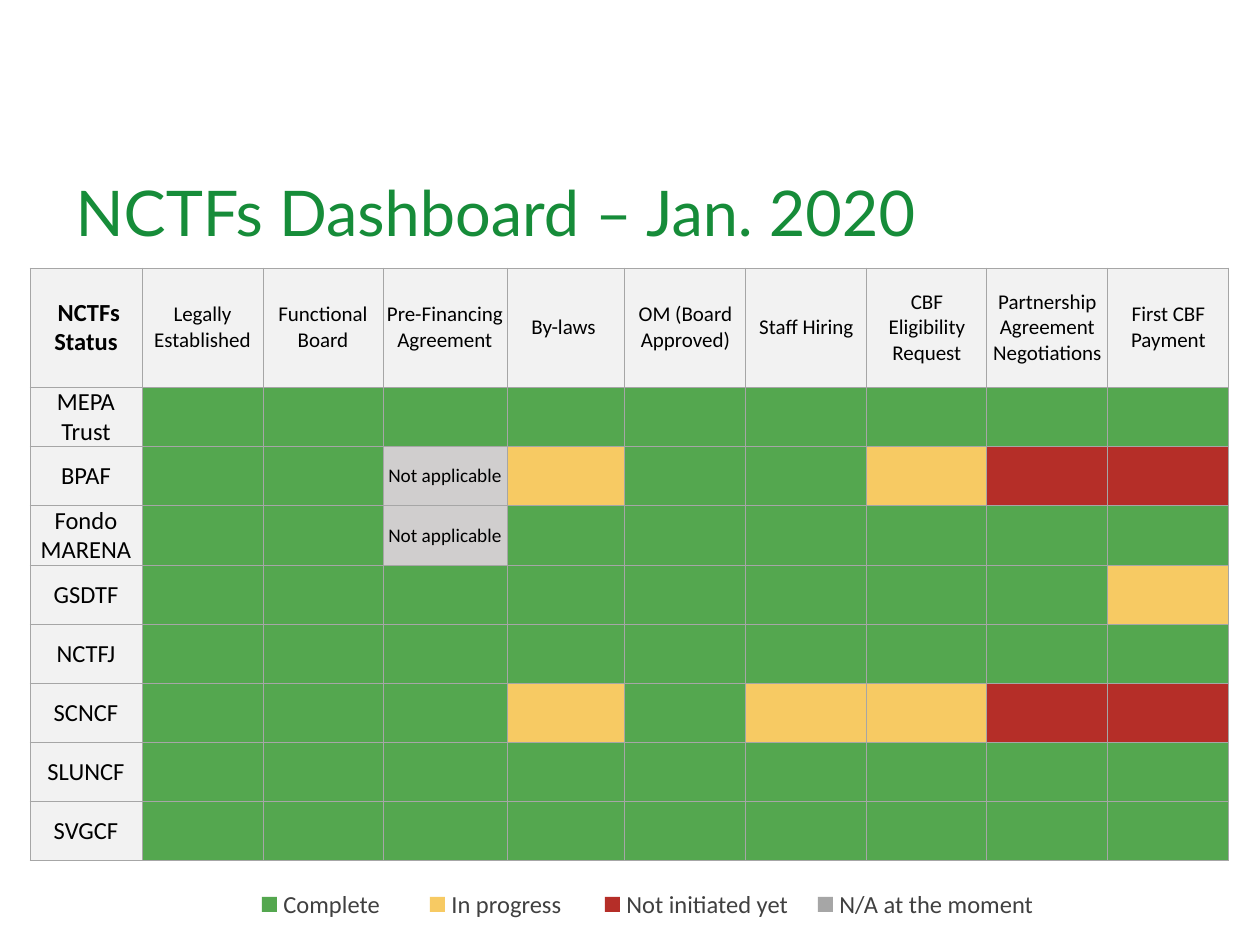
from lxml.etree import SubElement
from pptx import Presentation
from pptx.dml.color import RGBColor
from pptx.enum.shapes import MSO_SHAPE as Shape
from pptx.enum.text import MSO_ANCHOR as Anchor, MSO_AUTO_SIZE as AutoSize, PP_ALIGN as Align
from pptx.oxml.ns import qn
from pptx.util import Emu, Pt

EMU_PER_PX = 914400 / 126

COLORS = {
    "title": "168C39",
    "text": "000000",
    "legend": "404040",
    "header": "F2F2F2",
    "border": "A6A6A6",
    "complete": "54A74F",
    "progress": "F7CA63",
    "not_started": "B52E28",
    "not_applicable": "D0CECE",
    "on_hold": "A6A6A6",
}

HEADINGS = [
    "\u00a0NCTFs Status", "Legally Established", "Functional Board",
    "Pre-Financing Agreement", "By-laws ", "OM (Board Approved)", "Staff Hiring",
    "CBF Eligibility Request", "Partnership Agreement Negotiations ",
    "First CBF Payment",
]
# One letter per milestone: see STATUS
FUNDS = {
    "MEPA Trust": "CCCCCCCCC",
    "BPAF": "CCNPCCPXX",
    "Fondo MARENA": "CCNCCCCCC",
    "GSDTF": "CCCCCCCCP",
    "NCTFJ": "CCCCCCCCC",
    "SCNCF": "CCCPCPPXX",
    "SLUNCF": "CCCCCCCCC",
    "SVGCF": "CCCCCCCCC",
}
STATUS = {"C": "complete", "P": "progress", "X": "not_started", "N": "not_applicable"}
COLUMN_WIDTHS = [112, 121, 120, 124, 118, 121, 121, 120, 121, 121]
HEADER_HEIGHT, ROW_HEIGHT = 119, 59

# Marker left, label width, label, colour
LEGEND = [
    (262, 145, "Complete", "complete"),
    (430, 145, "In progress", "progress"),
    (605, 227, "Not initiated yet", "not_started"),
    (818, 432, "N/A at the moment", "on_hold"),
]


def px(value):
    return Emu(round(value * EMU_PER_PX))


def rgb(name):
    return RGBColor.from_string(COLORS[name])


def write(frame, text, size=14, font="Calibri", color="text", bold=False, align=Align.LEFT):
    paragraph = frame.paragraphs[0]
    paragraph.alignment = align
    run = paragraph.add_run()
    run.text = text
    run.font.size = Pt(size)
    run.font.name = font
    run.font.bold = bold
    run.font.color.rgb = rgb(color)


def format_cell(cell, fill, text="", **text_format):
    # Borders must precede the fill in the cell properties
    properties = cell._tc.get_or_add_tcPr()
    for side in ("lnL", "lnR", "lnT", "lnB"):
        line = SubElement(properties, qn("a:" + side), w=str(Pt(0.5)))
        solid = SubElement(line, qn("a:solidFill"))
        SubElement(solid, qn("a:srgbClr"), val=COLORS["border"])
    cell.fill.solid()
    cell.fill.fore_color.rgb = rgb(fill)
    if text:
        cell.vertical_anchor = Anchor.MIDDLE
        cell.margin_left = cell.margin_right = px(4)
        cell.margin_top = cell.margin_bottom = 0
        write(cell.text_frame, text, align=Align.CENTER, **text_format)


def add_title(slide, text):
    title = slide.shapes.title
    title.left, title.top, title.width, title.height = map(px, (63, 155, 1134, 113))
    title.text_frame.vertical_anchor = Anchor.MIDDLE
    write(title.text_frame, text, size=36, font="Lato", color="title")


def add_dashboard(slide):
    height = HEADER_HEIGHT + ROW_HEIGHT * len(FUNDS)
    table = slide.shapes.add_table(
        len(FUNDS) + 1, len(HEADINGS), px(30), px(268), px(sum(COLUMN_WIDTHS)), px(height)
    ).table
    table.first_row = table.horz_banding = False
    for column, width in zip(table.columns, COLUMN_WIDTHS):
        column.width = px(width)
    for index, row in enumerate(table.rows):
        row.height = px(ROW_HEIGHT if index else HEADER_HEIGHT)

    # Heading row
    for index, heading in enumerate(HEADINGS):
        format_cell(table.cell(0, index), "header", heading,
                    size=12 if index else 14, bold=index == 0)

    # One row per fund
    for row, (fund, codes) in enumerate(FUNDS.items(), start=1):
        format_cell(table.cell(row, 0), "header", fund)
        for column, code in enumerate(codes, start=1):
            note = "Not applicable" if code == "N" else ""
            format_cell(table.cell(row, column), STATUS[code], note, size=11)


def add_legend_entry(slide, left, width, text, color):
    marker = slide.shapes.add_shape(Shape.RECTANGLE, px(left), px(897), px(15), px(15))
    marker.shadow.inherit = False
    marker.fill.solid()
    marker.fill.fore_color.rgb = rgb(color)
    marker.line.fill.background()
    label = slide.shapes.add_textbox(px(left + 9), px(883), px(width), px(43))
    label.text_frame.word_wrap = True
    label.text_frame.auto_size = AutoSize.SHAPE_TO_FIT_TEXT
    write(label.text_frame, text, color="legend")


def main():
    presentation = Presentation()
    presentation.slide_width, presentation.slide_height = px(1260), px(945)
    slide = presentation.slides.add_slide(presentation.slide_layouts[5])
    add_title(slide, "NCTFs Dashboard – Jan. 2020")
    add_dashboard(slide)
    for entry in LEGEND:
        add_legend_entry(slide, *entry)
    presentation.save("out.pptx")


if __name__ == "__main__":
    main()
